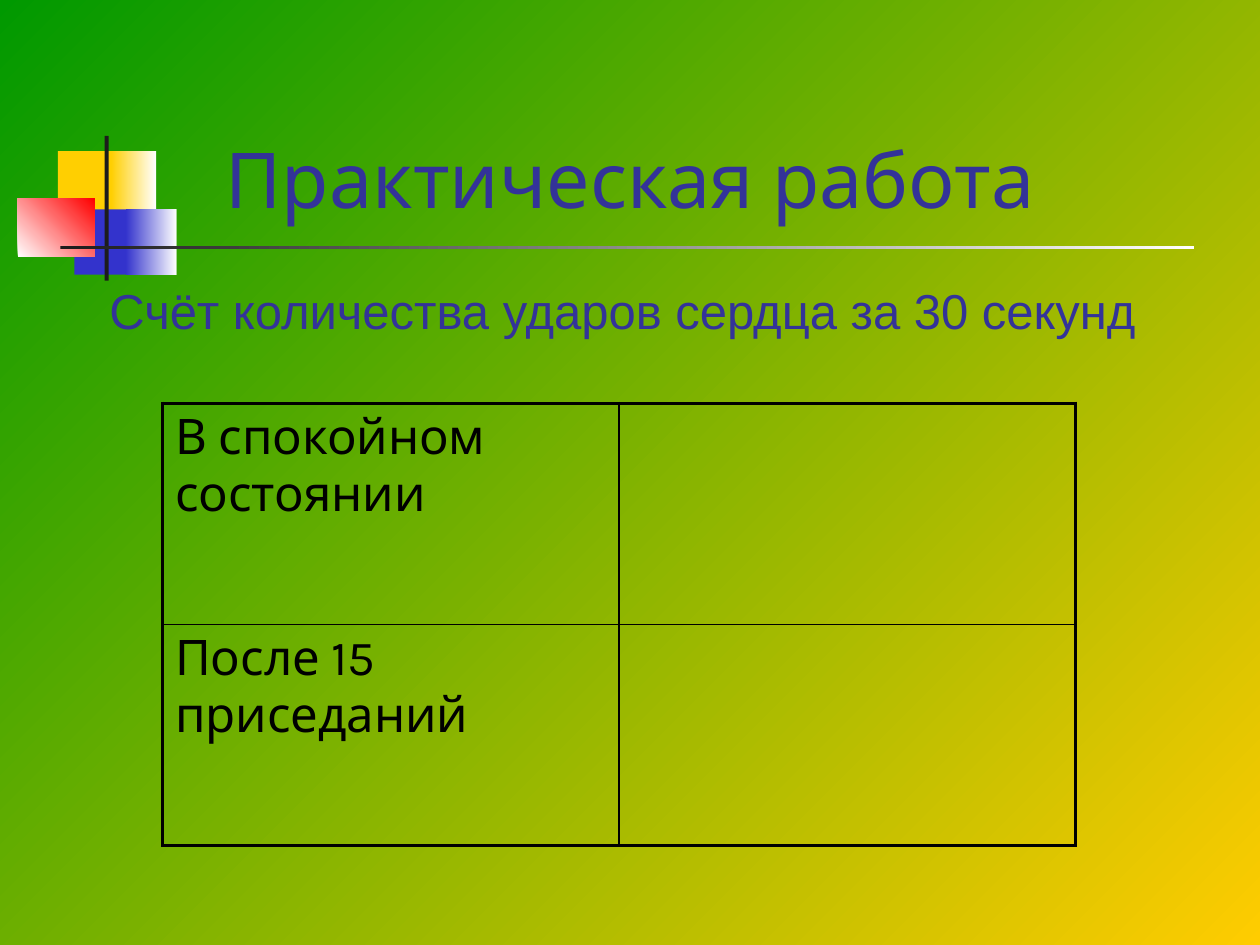
from dataclasses import dataclass

from lxml.etree import SubElement
from pptx import Presentation
from pptx.dml.color import RGBColor as RGB
from pptx.enum.shapes import MSO_SHAPE as Shape
from pptx.enum.text import MSO_ANCHOR as Anchor, PP_ALIGN as Align
from pptx.oxml.ns import qn
from pptx.util import Cm, Pt


@dataclass(frozen=True)
class Theme:
    green: str = "009900"
    amber: str = "FFCC00"
    yellow: str = "FFCF01"
    blue: str = "3333CC"
    red: str = "FF0000"
    white: str = "FFFFFF"
    dark: str = "1C1C1C"
    heading: str = "333399"
    ink: str = "000000"
    title_font: str = "Karla"
    note_font: str = "Arial"
    title_size: int = 44
    body_size: int = 28
    outer_line: float = 2.25
    inner_line: float = 1


T = Theme()

# Content
TITLE = "Практическая работа"
SUBTITLE = "Счёт количества ударов сердца за 30 секунд"
ROWS = [
    ("В спокойном состоянии", ""),
    ("После 15 приседаний", ""),
]

# Ornament: left, top, width, height in cm, colours, gradient angle
ORNAMENT = [
    (1.17, 3.05, 1.22, 1.32, (T.yellow,), 0),
    (2.24, 3.05, 0.91, 1.32, (T.yellow, T.white), 0),
    (1.5, 4.22, 1.17, 1.32, (T.blue,), 0),
    (2.54, 4.22, 1.02, 1.32, (T.blue, T.white), 0),
    (0.36, 4.01, 1.55, 1.17, (T.white, T.red), 45),
    (2.11, 2.74, 0.08, 2.92, (T.dark,), 0),
    (1.22, 4.95, 22.86, 0.08, (T.dark, T.white), 0),
]


def paint(fill, colors, angle=0):
    if len(colors) == 1:
        fill.solid()
        fill.fore_color.rgb = RGB.from_string(colors[0])
        return
    fill.gradient()
    fill.gradient_angle = angle
    for stop, color in zip(fill.gradient_stops, colors):
        stop.color.rgb = RGB.from_string(color)


def write(p, text, font, size, color, align=Align.LEFT):
    p.text = text
    p.alignment = align
    p.font.name = font
    p.font.size = Pt(size)
    p.font.color.rgb = RGB.from_string(color)


def add_text(slide, box, anchor, *style):
    tf = slide.shapes.add_textbox(*map(Cm, box)).text_frame
    tf.word_wrap = True
    tf.vertical_anchor = anchor
    write(tf.paragraphs[0], *style)


def set_borders(cell, widths):
    tc_pr = cell._tc.get_or_add_tcPr()
    for i, (side, width) in enumerate(widths.items()):
        ln = SubElement(tc_pr, qn(f"a:ln{side}"), w=str(Pt(width)))
        fill = SubElement(ln, qn("a:solidFill"))
        SubElement(fill, qn("a:srgbClr"), val=T.ink)
        tc_pr.insert(i, ln)  # borders precede the cell fill


def add_grid(slide, left, top, width, height):
    n_rows, n_cols = len(ROWS), len(ROWS[0])
    table = slide.shapes.add_table(
        n_rows, n_cols, Cm(left), Cm(top), Cm(width), Cm(height)).table
    table.first_row = table.horz_banding = False

    def line(is_edge):
        return T.outer_line if is_edge else T.inner_line

    for r, row in enumerate(ROWS):
        for c, text in enumerate(row):
            cell = table.cell(r, c)
            cell.fill.background()
            write(cell.text_frame.paragraphs[0], text,
                  T.title_font, T.body_size, T.ink)
            set_borders(cell, {
                "L": line(c == 0), "R": line(c == n_cols - 1),
                "T": line(r == 0), "B": line(r == n_rows - 1),
            })


def main():
    prs = Presentation()
    prs.slide_width, prs.slide_height = Cm(25.4), Cm(19.05)
    slide = prs.slides.add_slide(prs.slide_layouts[6])
    paint(slide.background.fill, (T.green, T.amber), 315)

    # Corner ornament and rule
    for *box, colors, angle in ORNAMENT:
        sp = slide.shapes.add_shape(Shape.RECTANGLE, *map(Cm, box))
        sp.shadow.inherit = False
        sp.line.fill.background()
        paint(sp.fill, colors, angle)

    # Title, results table, subtitle
    add_text(slide, (4.3, 0.58, 20.5, 4.06), Anchor.BOTTOM,
             TITLE, T.title_font, T.title_size, T.heading)
    add_grid(slide, 3.28, 8.13, 18.4, 8.91)
    add_text(slide, (0.69, 5.54, 22.45, 1.45), Anchor.TOP,
             SUBTITLE, T.note_font, T.body_size, T.heading, Align.RIGHT)

    prs.save("out.pptx")


if __name__ == "__main__":
    main()
